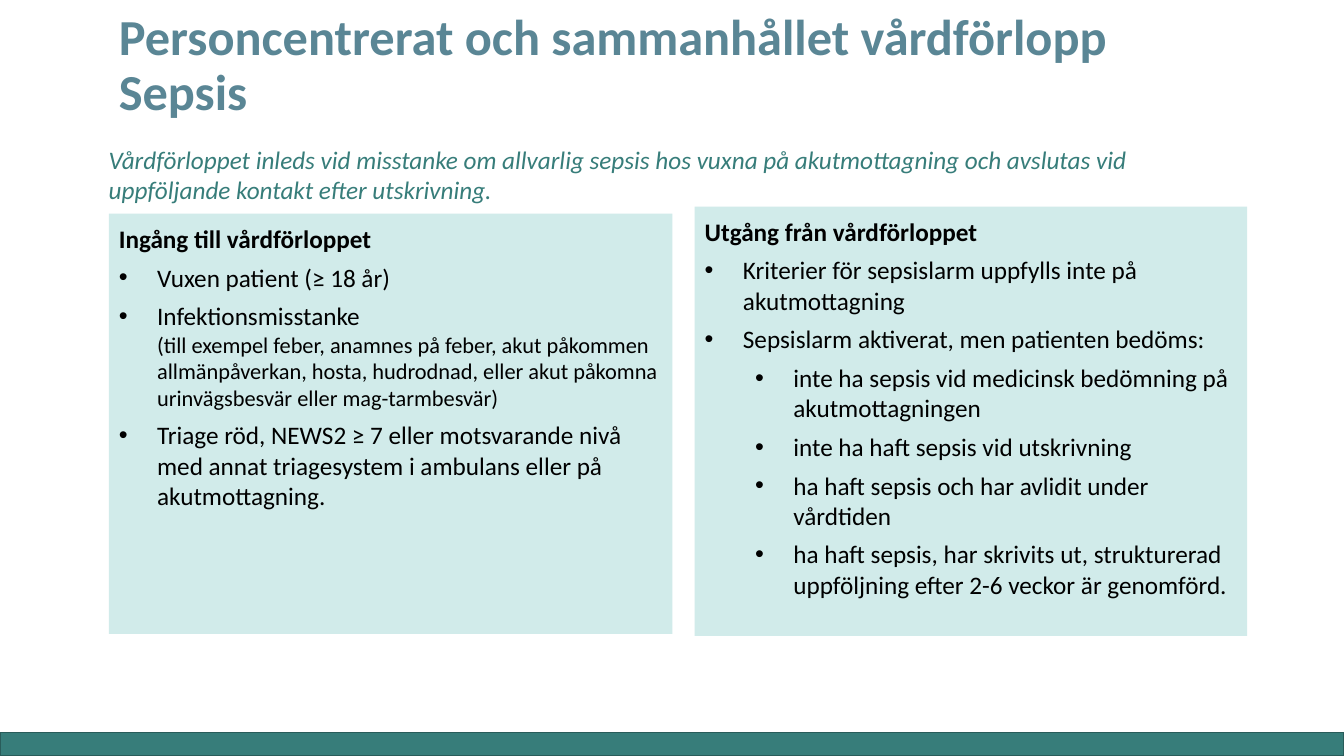
import pptx
import pptx.dml.color
import pptx.enum.shapes
import pptx.enum.text
import pptx.util
from lxml import etree

Inches, Pt = pptx.util.Inches, pptx.util.Pt
TEAL, BLACK = "377D7A", "000000"


def color(hex_value):
    return pptx.dml.color.RGBColor.from_string(hex_value)


def write(paragraph, text, size, hex_value, bold=False, italic=False):
    """Fill a paragraph with text in one uniform font."""
    paragraph.text = text
    paragraph.alignment = pptx.enum.text.PP_ALIGN.LEFT
    font = paragraph.font
    font.name, font.size = "Calibri", Pt(size)
    font.bold, font.italic = bold, italic
    font.color.rgb = color(hex_value)


presentation = pptx.Presentation()
presentation.slide_width = Inches(13.33)
presentation.slide_height = Inches(7.5)
slide = presentation.slides.add_slide(presentation.slide_layouts[6])
shapes = slide.shapes

footer_band = shapes.add_shape(
    pptx.enum.shapes.MSO_SHAPE.RECTANGLE, Inches(0), Inches(7.27), Inches(13.33), Inches(0.23))
footer_band.shadow.inherit = False
footer_band.fill.solid()
footer_band.fill.fore_color.rgb = color(TEAL)
footer_band.line.color.rgb = color("295C5A")
footer_band.line.width = Pt(1)

title = shapes.add_textbox(Inches(1.08), Inches(0.67), Inches(11.19), Inches(0.58)).text_frame
title.word_wrap = True
title.vertical_anchor = pptx.enum.text.MSO_ANCHOR.BOTTOM
write(title.paragraphs[0], "Personcentrerat och sammanhållet vårdförlopp Sepsis", 36, "5A8695", bold=True)
title.paragraphs[0].line_spacing = 0.9

# Each panel: left, top, width, height, heading, bullets as (level, text, small print)
panels = [
    (1.08, 2.12, 5.59, 4.17, "Ingång till vårdförloppet", [
        (0, "Vuxen patient (≥ 18 år)", ""),
        (0, "Infektionsmisstanke",
         "(till exempel feber, anamnes på feber, akut påkommen allmänpåverkan, hosta, "
         "hudrodnad, eller akut påkomna urinvägsbesvär eller mag-tarmbesvär)"),
        (0, "Triage röd, NEWS2 ≥ 7 eller motsvarande nivå med annat triagesystem "
            "i ambulans eller på akutmottagning.", ""),
    ]),
    (6.89, 2.05, 5.48, 4.26, "Utgång från vårdförloppet", [
        (0, "Kriterier för sepsislarm uppfylls inte på akutmottagning", ""),
        (0, "Sepsislarm aktiverat, men patienten bedöms:", ""),
        (1, "inte ha sepsis vid medicinsk bedömning på akutmottagningen", ""),
        (1, "inte ha haft sepsis vid utskrivning", ""),
        (1, "ha haft sepsis och har avlidit under vårdtiden", ""),
        (1, "ha haft sepsis, har skrivits ut, strukturerad uppföljning efter "
            "2-6 veckor är genomförd.", ""),
    ]),
]
for left, top, width, height, heading, bullets in panels:
    panel = shapes.add_shape(
        pptx.enum.shapes.MSO_SHAPE.RECTANGLE, Inches(left), Inches(top), Inches(width), Inches(height))
    panel.shadow.inherit = False
    panel.fill.solid()
    panel.fill.fore_color.rgb = color("D1EBEA")
    panel.line.fill.background()
    criteria = panel.text_frame
    criteria.word_wrap = True
    criteria.vertical_anchor = pptx.enum.text.MSO_ANCHOR.TOP
    write(criteria.paragraphs[0], heading, 18, BLACK, bold=True)
    criteria.paragraphs[0].line_spacing = 1.15
    for level, text, small_print in bullets:
        paragraph = criteria.add_paragraph()
        paragraph.level = level
        paragraph.space_before = Pt(6)
        properties = paragraph._p.get_or_add_pPr()
        properties.set("marL", str(Inches(0.38 + 0.5 * level)))
        properties.set("indent", str(Inches(-0.38)))
        etree.SubElement(properties, pptx.oxml.ns.qn("a:buFont"), typeface="Arial")
        etree.SubElement(properties, pptx.oxml.ns.qn("a:buChar"), char="•")
        write(paragraph, text, 18, BLACK)
        if small_print:
            paragraph.add_line_break()
            detail = paragraph.add_run()
            detail.text = small_print
            detail.font.size = Pt(16)

summary = shapes.add_textbox(Inches(0.98), Inches(1.38), Inches(11.05), Inches(0.71)).text_frame
summary.word_wrap = True
write(summary.paragraphs[0],
      "Vårdförloppet inleds vid misstanke om allvarlig sepsis hos vuxna på akutmottagning "
      "och avslutas vid uppföljande kontakt efter utskrivning.", 18, TEAL, italic=True)

presentation.save("out.pptx")
